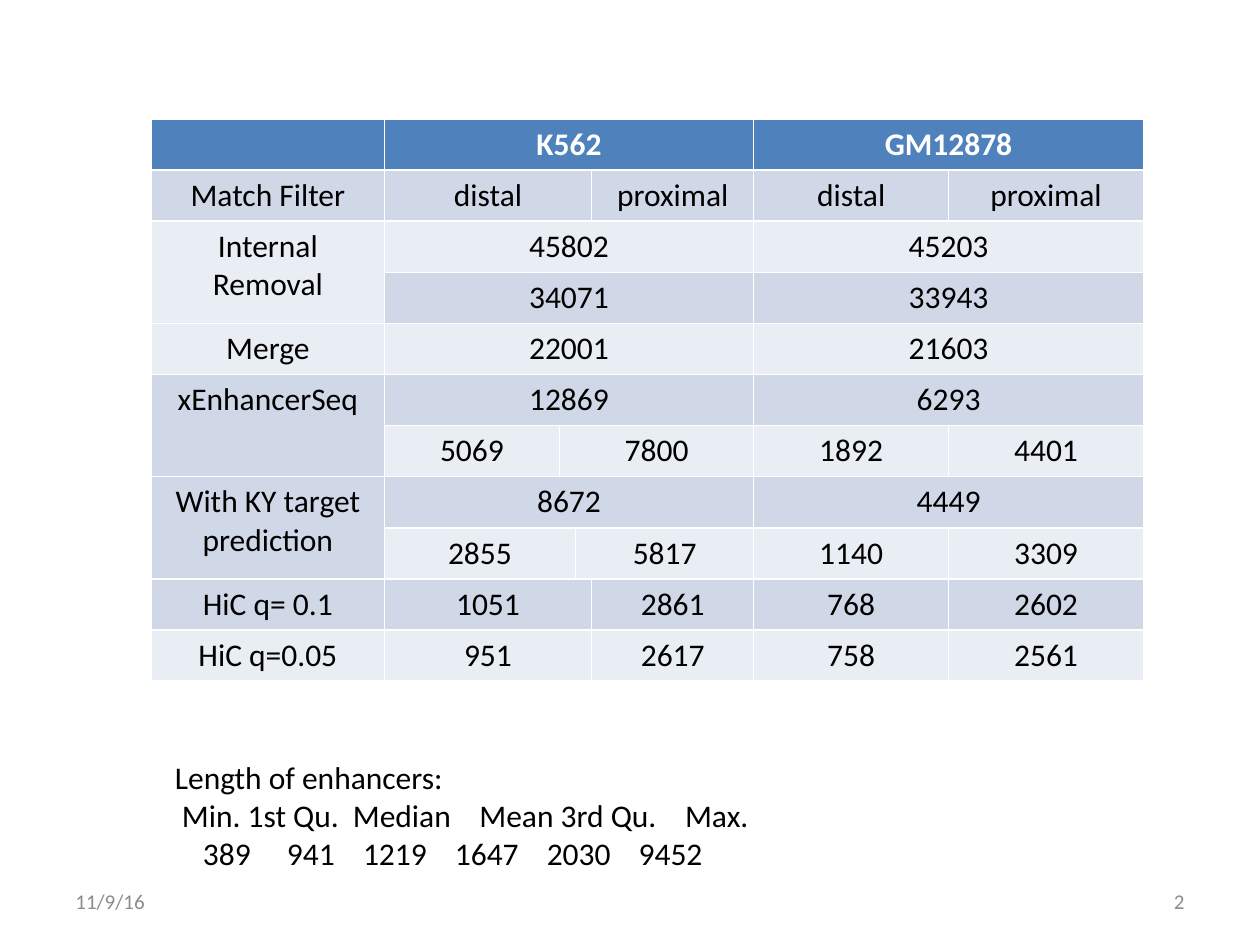
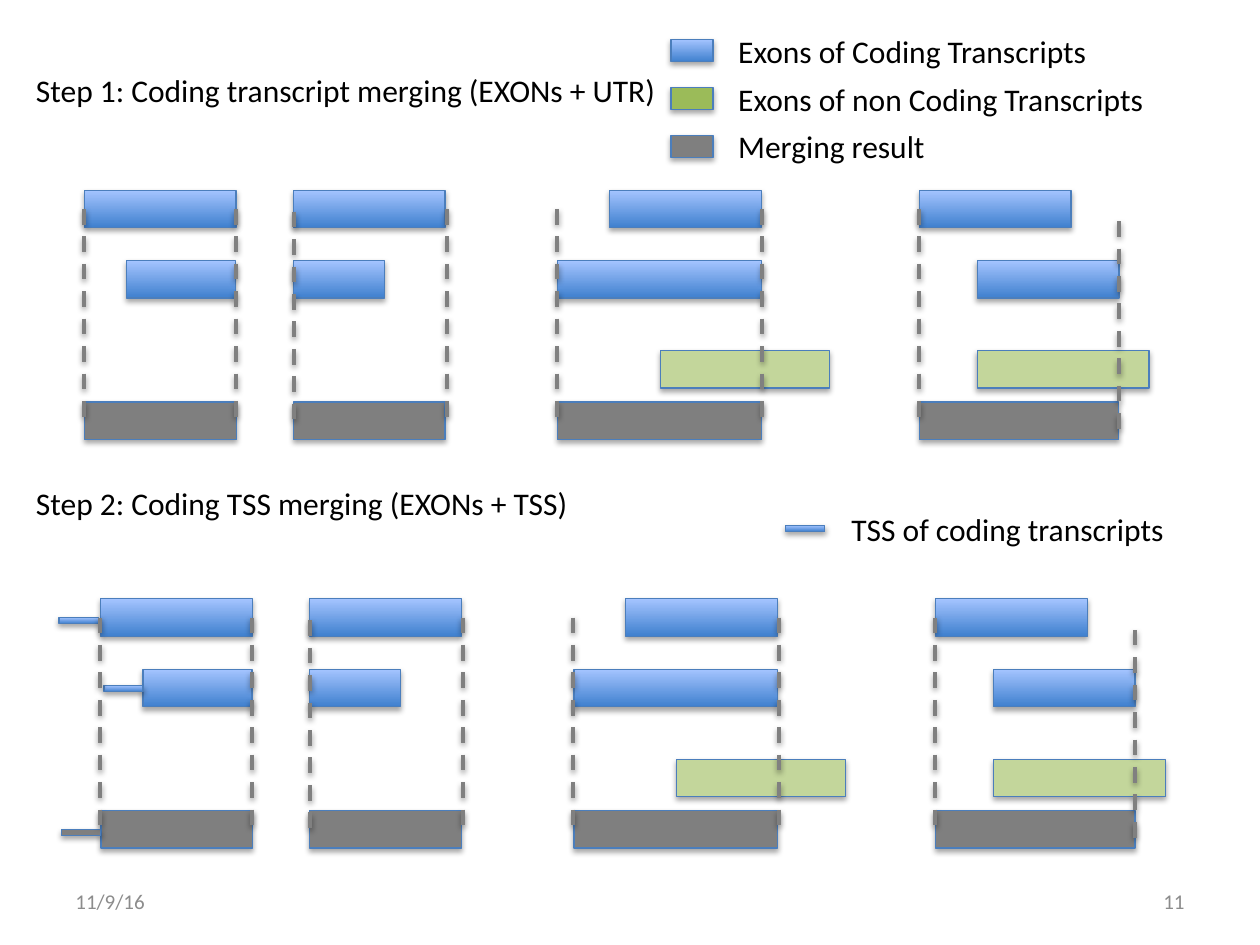
from lxml import etree
from pptx import Presentation
from pptx import util as u
from pptx.dml import color
from pptx.enum import dml, shapes, text
from pptx.oxml import ns

Pt = u.Pt
rgb = color.RGBColor.from_string
FONT, BLACK, WHITE, PALE = "Calibri", "000000", "FFFFFF", "8C8C8C"
HEAD, BANDS = "4F81BD", ("E9EDF4", "D0D8E8")
DARK, LIGHT, EDGE = "3F80CE", "A4C4FF", "4B7EBC"
GREEN, LIME, GRAY = "9BBB59", "C3D69B", "7F7F7F"
LEFT, MID, RIGHT = text.PP_ALIGN.LEFT, text.PP_ALIGN.CENTER, text.PP_ALIGN.RIGHT


def write(slide, x, y, w, h, lines, size=18, ink=BLACK, align=LEFT):
    box = slide.shapes.add_textbox(Pt(x), Pt(y), Pt(w), Pt(h))
    frame = box.text_frame
    frame.word_wrap = True
    frame.text = lines
    for para in frame.paragraphs:
        para.alignment = align
        para.font.name, para.font.size = FONT, Pt(size)
        para.font.color.rgb = rgb(ink)
    return frame


def shade(item, drop, alpha):
    """Give a shape or connector a soft shadow straight below it."""
    props = item.element.spPr
    for old in props.findall(ns.qn("a:effectLst")):
        props.remove(old)
    effect = etree.SubElement(props, ns.qn("a:effectLst"))
    cast = etree.SubElement(effect, ns.qn("a:outerShdw"), blurRad="40000",
                            dist=str(Pt(drop)), dir="5400000", rotWithShape="0")
    tone = etree.SubElement(cast, ns.qn("a:srgbClr"), val=BLACK)
    etree.SubElement(tone, ns.qn("a:alpha"), val=str(alpha * 1000))


deck = Presentation()
deck.slide_width, deck.slide_height = Pt(720), Pt(540)
counts, steps = [deck.slides.add_slide(deck.slide_layouts[6]) for _ in range(2)]

# Footers
for slide, page in ((counts, "2"), (steps, "11")):
    for x, note, align in ((36, "11/9/16", LEFT), (516, page, RIGHT)):
        foot = write(slide, x, 500.5, 168, 28.75, note, 12, PALE, align)
        foot.vertical_anchor = text.MSO_ANCHOR.MIDDLE

# Table of counts: each cell is its text and the columns it spans;
# None continues the label above
rows = [
    [("", 1), ("K562", 4), ("GM12878", 2)],
    [("Match Filter", 1), ("distal", 3), ("proximal", 1), ("distal", 1), ("proximal", 1)],
    [("Internal Removal", 1), ("45802", 4), ("45203", 2)],
    [(None, 1), ("34071", 4), ("33943", 2)],
    [("Merge", 1), ("22001", 4), ("21603", 2)],
    [("xEnhancerSeq", 1), ("12869", 4), ("6293", 2)],
    [(None, 1), ("5069", 1), ("7800", 3), ("1892", 1), ("4401", 1)],
    [("With KY target prediction", 1), ("8672", 4), ("4449", 2)],
    [(None, 1), ("2855", 2), ("5817", 2), ("1140", 1), ("3309", 1)],
    [("HiC q= 0.1", 1), ("1051", 3), ("2861", 1), ("768", 1), ("2602", 1)],
    [("HiC q=0.05", 1), ("951", 3), ("2617", 1), ("758", 1), ("2561", 1)],
]
widths = (133, 100.2, 9.2, 9.2, 92.6, 111.4, 111.4)
high = 29.2
table = counts.shapes.add_table(len(rows), len(widths), Pt(86.6), Pt(68),
                                Pt(sum(widths)), Pt(high * len(rows))).table
for col, width in zip(table.columns, widths):
    col.width = Pt(width)
for r, row in enumerate(rows):
    table.rows[r].height = Pt(high)
    c = 0
    for label, span in row:
        cell = table.cell(r, c)
        if label is None:
            table.cell(r - 1, c).merge(cell)
        else:
            if span > 1:
                cell.merge(table.cell(r, c + span - 1))
            cell.fill.solid()
            cell.fill.fore_color.rgb = rgb(BANDS[r % 2] if r else HEAD)
            cell.text = label
            para = cell.text_frame.paragraphs[0]
            para.alignment = MID
            para.font.name, para.font.size = FONT, Pt(18)
            para.font.bold = r == 0
            para.font.color.rgb = rgb(BLACK if r else WHITE)
        c += span

# Summary of enhancer lengths, set on tab stops
frame = write(counts, 92.9, 429.8, 380, 72.7,
              "Length of enhancers:\n"
              "\tMin. 1st Qu.\tMedian\tMean 3rd Qu.\tMax.\n"
              "\t389\t941\t1219\t1647\t2030\t9452")
stops = ((4, 101.7, 174, 291.5), (16, 64, 107.5, 160, 212.5, 265))
for para, places in zip(frame.paragraphs[1:], stops):
    tabs = etree.Element(ns.qn("a:tabLst"))
    for place in places:
        etree.SubElement(tabs, ns.qn("a:tab"), pos=str(Pt(place)), algn="l")
    para._p.get_or_add_pPr().insert(0, tabs)

# Step titles and legend
write(steps, 13.5, 36.9, 385, 29, "Step 1: Coding transcript merging (EXONs + UTR)")
write(steps, 13.5, 273.2, 340, 29, "Step 2: Coding TSS merging (EXONs + TSS)")
write(steps, 479.5, 288, 210, 29, "TSS of coding transcripts")
bars = []  # left, top, width, height, fill (None for the blue gradient)
legend = (("Exons of Coding Transcripts", None),
          ("Exons of non Coding Transcripts", GREEN), ("Merging result", GRAY))
for i, (label, paint) in enumerate(legend):
    write(steps, 414.7, 14.5 + 27.4 * i, 265, 29, label)
    bars.append((383.5, 22.5 + 27.4 * i, 24, 12.8, paint))

# Lanes of exons, the same in both steps: top, fill, (left, width) of each bar
lanes = (
    (108.7, None, ((48.2, 86.8), (167.6, 86.8), (348.2, 86.8), (525.3, 86.8))),
    (149, None, ((72.4, 62.4), (167.6, 52), (318.7, 116.3), (558.4, 81))),
    (200.3, LIME, ((377.3, 96.7), (558.4, 98.2))),
    (229.7, GRAY, ((48.4, 86.8), (167.6, 86.8), (318.7, 116.3), (525.3, 114))),
)
guides = ((48.1, 119.4), (134.8, 119.4), (168, 121), (255.2, 119.4),
          (318.2, 119.4), (435.7, 119.4), (525.2, 119.4), (639.4, 126.4))
shifts = ((0, 0), (9.3, 233.5))
for dx, dy in shifts:
    for y, paint, spans in lanes:
        bars += [(x + dx, y + dy, w, 21.4, paint) for x, w in spans]

# TSS marks and their legend key
for x, y, paint in ((33.8, 352.8, None), (59.4, 391.7, None),
                    (35.3, 473.9, GRAY), (449, 300.2, None)):
    bars.append((x, y, 22.4, 3.6, paint))

for x, y, w, h, paint in bars:
    bar = steps.shapes.add_shape(shapes.MSO_SHAPE.RECTANGLE, Pt(x), Pt(y), Pt(w), Pt(h))
    if paint:
        bar.fill.solid()
        bar.fill.fore_color.rgb = rgb(paint)
    else:
        bar.fill.gradient()
        bar.fill.gradient_angle = 90
        for stop, tone in zip(bar.fill.gradient_stops, (DARK, LIGHT)):
            stop.color.rgb = rgb(tone)
    bar.line.color.rgb = rgb(EDGE)
    bar.line.width = Pt(0.75)
    shade(bar, 1.8, 35)

# Dashed guides from the exons down to the merged bars
for dx, dy in shifts:
    for x, y in guides:
        rule = steps.shapes.add_connector(shapes.MSO_CONNECTOR.STRAIGHT, Pt(x + dx),
                                          Pt(y + dy), Pt(x + dx), Pt(y + dy + 121))
        rule.line.color.rgb = rgb("808080")
        rule.line.width = Pt(2.25)
        rule.line.dash_style = dml.MSO_LINE.DASH
        shade(rule, 1.6, 38)

deck.save("out.pptx")
